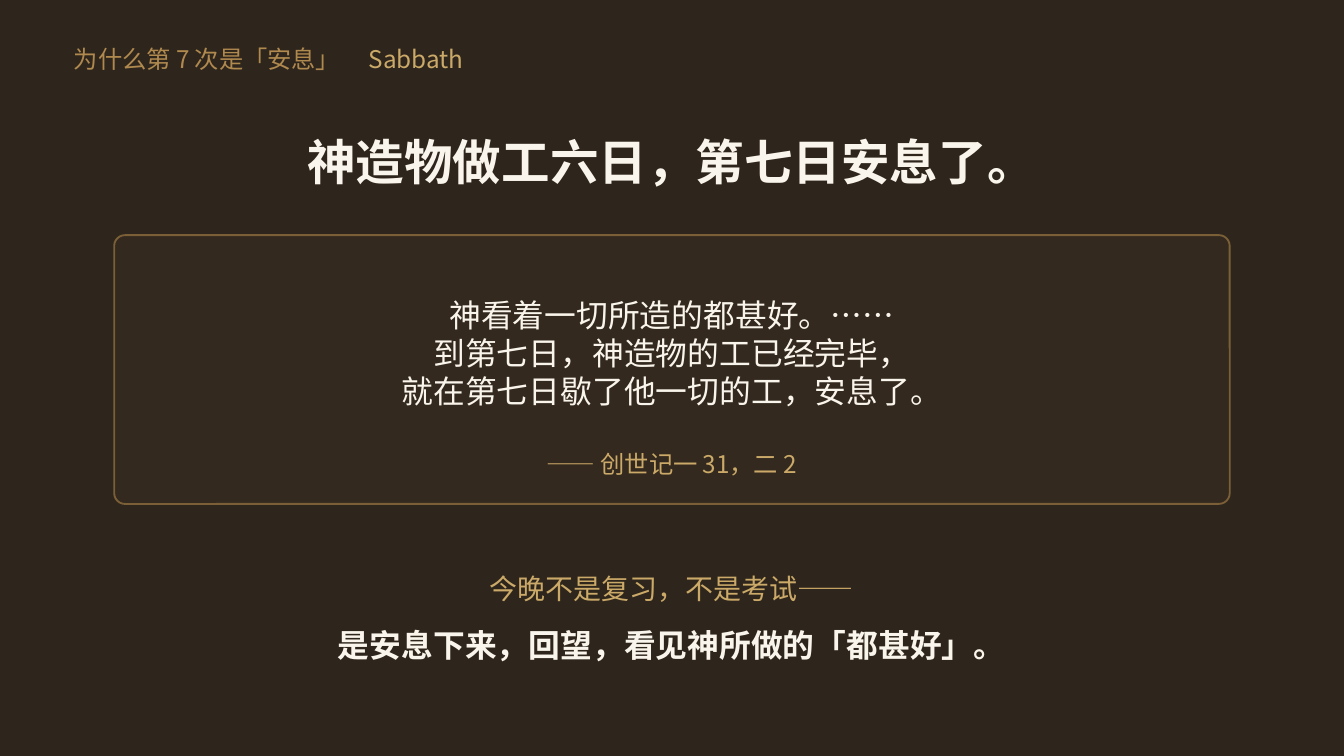
from dataclasses import dataclass

from lxml.etree import SubElement
from pptx import Presentation
from pptx.dml.color import RGBColor
from pptx.enum.shapes import MSO_SHAPE
from pptx.enum.text import MSO_ANCHOR, PP_ALIGN
from pptx.oxml.ns import qn
from pptx.util import Inches, Pt


@dataclass(frozen=True)
class Theme:
    font: str = "Noto Sans CJK SC"
    night: str = "2E261C"
    panel: str = "33291E"
    border: str = "7A5F37"
    bronze: str = "B0894F"
    gold: str = "CBA968"
    cream: str = "FAF5EC"
    small: int = 13
    medium: int = 15
    large: int = 17
    title: int = 26


class SlideBuilder:
    CELL = 0.05

    def __init__(self, slide, theme):
        self.slide = slide
        self.theme = theme

    def grid(self, *cells):
        return [Inches(cell * self.CELL) for cell in cells]

    def panel(self, bounds, fill, border=None, corner=None):
        kind = MSO_SHAPE.ROUNDED_RECTANGLE if corner else MSO_SHAPE.RECTANGLE
        panel = self.slide.shapes.add_shape(kind, *bounds)
        panel.shadow.inherit = False
        panel.fill.solid()
        panel.fill.fore_color.rgb = RGBColor.from_string(fill)
        if corner:
            panel.adjustments[0] = corner
        if border:
            panel.line.color.rgb = RGBColor.from_string(border)
            panel.line.width = Pt(1)
        else:
            panel.line.fill.background()

    def text(self, bounds, lines, size, bold=None, align=PP_ALIGN.CENTER, tab=None):
        frame = self.slide.shapes.add_textbox(*bounds).text_frame
        layout = {
            "word_wrap": True,
            "vertical_anchor": MSO_ANCHOR.MIDDLE,
            "margin_left": 0,
            "margin_right": 0,
            "margin_top": 0,
            "margin_bottom": 0,
        }
        for name, value in layout.items():
            setattr(frame, name, value)
        for index, parts in enumerate(lines):
            paragraph = frame.add_paragraph() if index else frame.paragraphs[0]
            paragraph.alignment = align
            if tab:
                stops = SubElement(paragraph._p.get_or_add_pPr(), qn("a:tabLst"))
                SubElement(stops, qn("a:tab"), pos=str(self.grid(tab)[0]), algn="l")
            for wording, color in parts:
                self.run(paragraph, wording, color, size, bold)

    def run(self, paragraph, wording, color, size, bold):
        run = paragraph.add_run()
        run.text = wording
        style = {"name": self.theme.font, "size": Pt(size), "bold": bold}
        for name, value in style.items():
            setattr(run.font, name, value)
        run.font.color.rgb = RGBColor.from_string(color)
        SubElement(run._r.get_or_add_rPr(), qn("a:ea"), typeface=self.theme.font)


def main():
    theme = Theme()
    deck = Presentation()
    deck.slide_width = Inches(10)
    deck.slide_height = deck.slide_width * 9 // 16
    builder = SlideBuilder(deck.slides.add_slide(deck.slide_layouts[6]), theme)
    grid = builder.grid

    builder.panel((0, 0, deck.slide_width, deck.slide_height), theme.night)
    builder.text(
        grid(11, 5.6, 170, 6.4),
        [[("为什么第 7 次是「安息」", theme.bronze), ("\tSabbath", theme.gold)]],
        theme.small, align=PP_ALIGN.LEFT, tab=43.9,
    )
    builder.text(
        grid(10, 19, 180, 10),
        [[("神造物做工六日，第七日安息了。", theme.cream)]],
        theme.title, bold=True,
    )

    builder.panel(grid(17, 35, 166, 40), theme.panel, theme.border, corner=0.04)
    verses = (
        "神看着一切所造的都甚好。……",
        "到第七日，神造物的工已经完毕，",
        "就在第七日歇了他一切的工，安息了。",
    )
    builder.text(
        grid(23, 40, 154, 25), [[(verse, theme.cream)] for verse in verses], theme.large
    )
    builder.text(
        grid(23, 66, 154, 6), [[("—— 创世记一 31，二 2", theme.gold)]], theme.small
    )

    builder.text(
        grid(10, 84, 180, 7), [[("今晚不是复习，不是考试——", theme.gold)]], theme.medium
    )
    builder.text(
        grid(10, 92, 180, 8),
        [[("是安息下来，回望，看见神所做的「都甚好」。", theme.cream)]],
        theme.large, bold=True,
    )
    deck.save("out.pptx")


if __name__ == "__main__":
    main()
